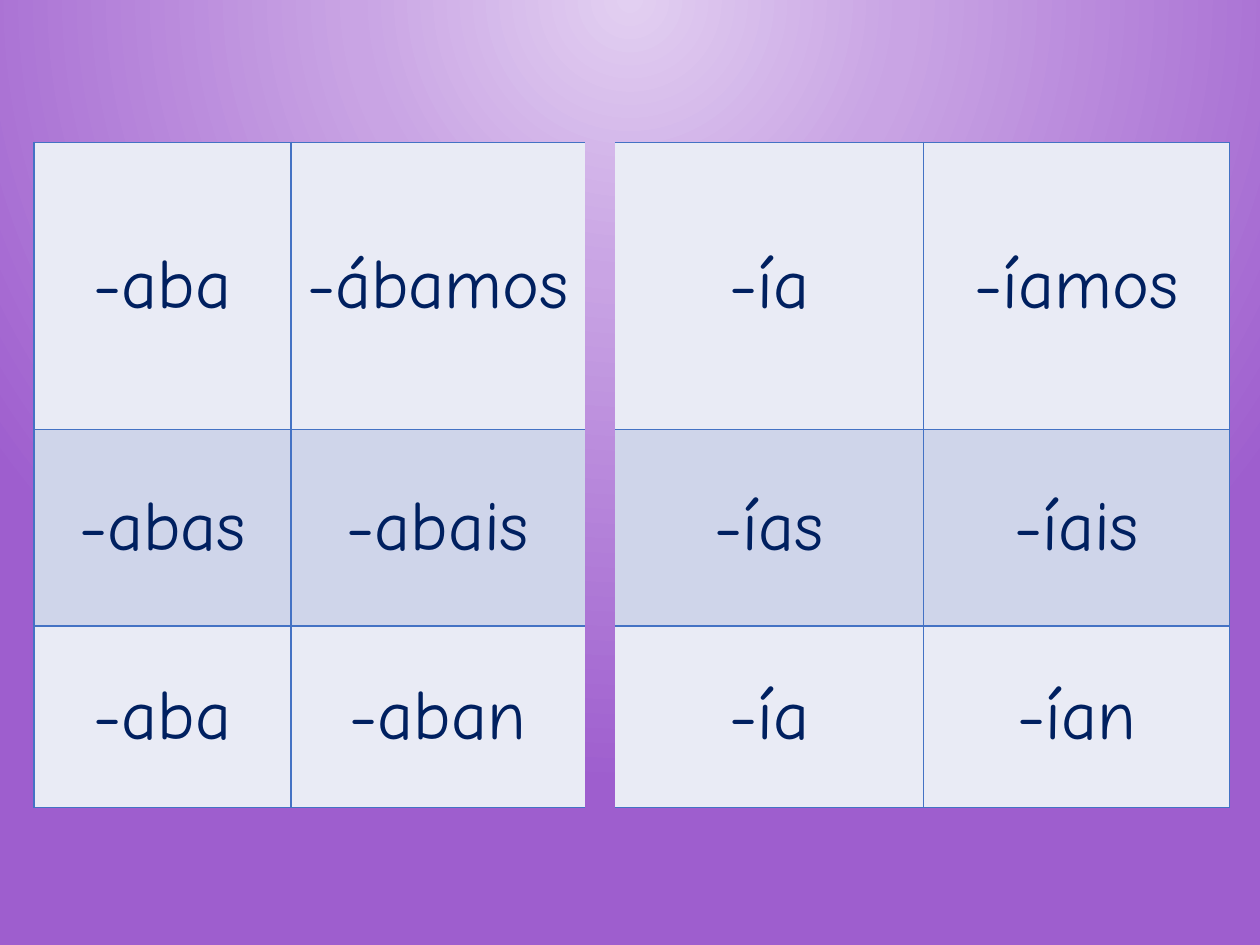
from lxml.etree import SubElement
from pptx import Presentation
from pptx.dml.color import RGBColor
from pptx.enum.text import MSO_ANCHOR, PP_ALIGN
from pptx.oxml import parse_xml
from pptx.oxml.ns import nsdecls, qn
from pptx.util import Inches, Pt

THEME = {
    "font": "Comic Neue",
    "size": 40,
    "text": "002060",
    "border": "4472C4",
    "border_width": 1,
    "bands": ["E9EBF5", "CFD5EA"],
    "background": [(0, "E2CFF1"), (35, "C9A4E4"), (100, "9E5ECE")],
}
PLAIN_TABLE_STYLE = "{2D5ABB26-0587-4C30-8999-92F81FD0307C}"
LEFT, TOP = 2.7, 15.07
COLUMN_SHARES = [20.4, 23.3, 2.3, 24.5, 24.3]
ROW_SHARES = [30.4, 20.8, 19.2]
GAP_COLUMN = 2
ENDINGS = [
    ["-aba", "-ábamos", "", "-ía", "-íamos"],
    ["-abas", "-abais", "", "-ías", "-íais"],
    ["-aba", "-aban", "", "-ía", "-ían"],
]


def write_text(cell, text, *, font, size, color):
    cell.vertical_anchor = MSO_ANCHOR.MIDDLE
    paragraph = cell.text_frame.paragraphs[0]
    paragraph.alignment = PP_ALIGN.CENTER
    run = paragraph.add_run()
    run.text = text
    run.font.name = font
    run.font.size = Pt(size)
    run.font.color.rgb = RGBColor.from_string(color)


def set_borders(cell, visible_sides):
    properties = cell._tc.get_or_add_tcPr()
    for side in "LRTB":
        line = SubElement(properties, qn(f"a:ln{side}"), w=str(Pt(THEME["border_width"])))
        if side in visible_sides:
            fill = SubElement(line, qn("a:solidFill"))
            SubElement(fill, qn("a:srgbClr"), val=THEME["border"])
        else:
            SubElement(line, qn("a:noFill"))


presentation = Presentation()
presentation.slide_width = Inches(10)
presentation.slide_height = Inches(7.5)
across = presentation.slide_width / 100
down = presentation.slide_height / 100
slide = presentation.slides.add_slide(presentation.slide_layouts[6])

slide.background.fill.solid()
stops = "".join(
    f'<a:gs pos="{position * 1000}"><a:srgbClr val="{color}"/></a:gs>'
    for position, color in THEME["background"]
)
gradient = parse_xml(
    f'<a:gradFill {nsdecls("a")} rotWithShape="1"><a:gsLst>{stops}</a:gsLst>'
    '<a:path path="circle"><a:fillToRect l="50000" t="-80000" r="50000" b="180000"/>'
    "</a:path></a:gradFill>"
)
background = slide.element.find(".//" + qn("p:bgPr"))
background.replace(background.find(qn("a:solidFill")), gradient)

table_frame = slide.shapes.add_table(
    len(ROW_SHARES), len(COLUMN_SHARES),
    round(LEFT * across), round(TOP * down),
    round(sum(COLUMN_SHARES) * across), round(sum(ROW_SHARES) * down),
)
table = table_frame.table
table.first_row = False
table.horz_banding = False
table._tbl.tblPr.find(qn("a:tableStyleId")).text = PLAIN_TABLE_STYLE
for column, share in zip(table.columns, COLUMN_SHARES):
    column.width = round(share * across)
for row, share in zip(table.rows, ROW_SHARES):
    row.height = round(share * down)

for row_index, endings in enumerate(ENDINGS):
    band = THEME["bands"][row_index % 2]
    for column_index, ending in enumerate(endings):
        cell = table.cell(row_index, column_index)
        if column_index == GAP_COLUMN:
            set_borders(cell, "")
            cell.fill.background()
            continue
        hidden_side = {GAP_COLUMN - 1: "R", GAP_COLUMN + 1: "L"}.get(column_index, "")
        set_borders(cell, set("LRTB") - set(hidden_side))
        cell.fill.solid()
        cell.fill.fore_color.rgb = RGBColor.from_string(band)
        write_text(cell, ending, font=THEME["font"], size=THEME["size"], color=THEME["text"])

presentation.save("out.pptx")
